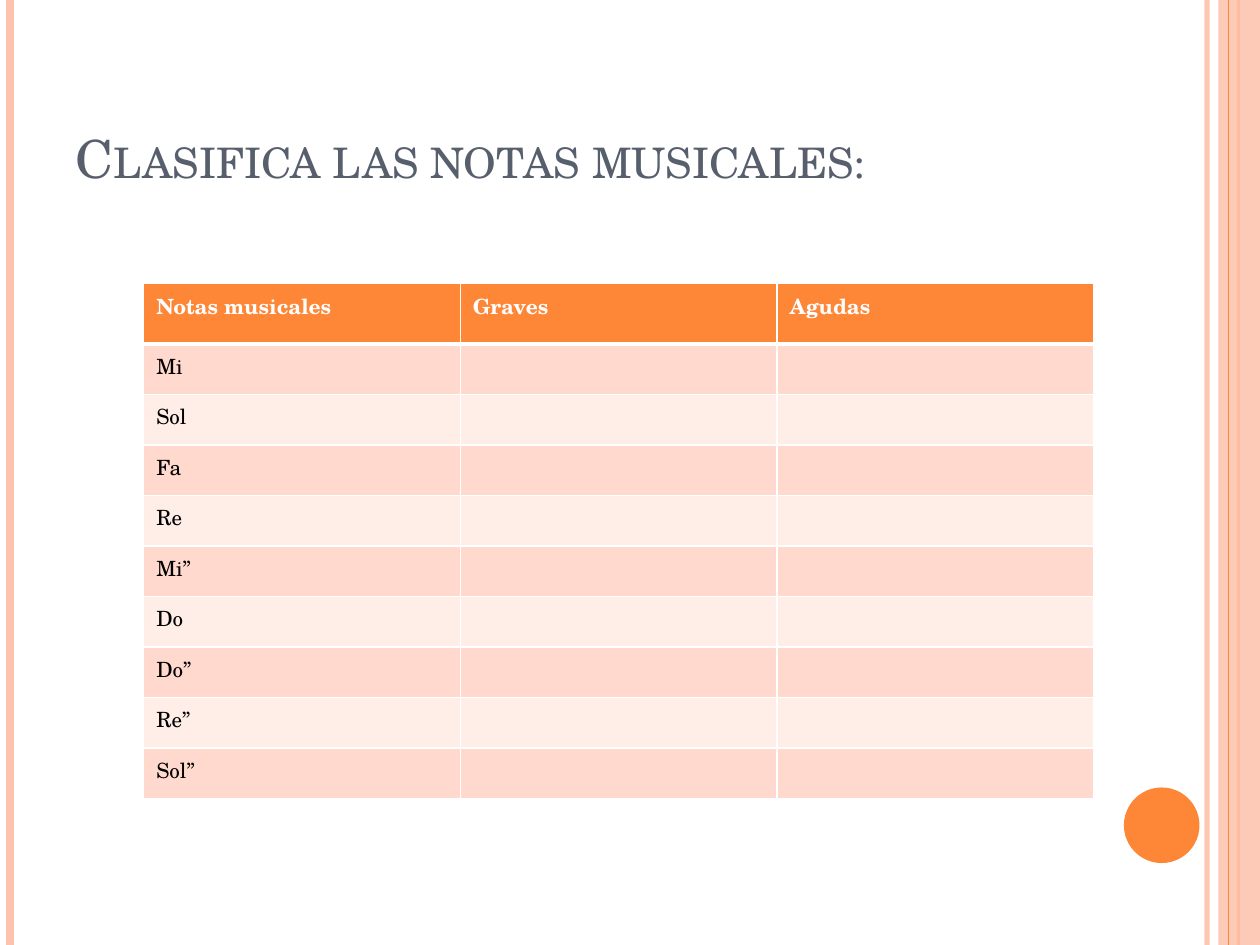
from lxml.etree import SubElement
from pptx import Presentation
from pptx.dml.color import RGBColor
from pptx.enum.shapes import MSO_CONNECTOR, MSO_SHAPE
from pptx.enum.text import MSO_ANCHOR
from pptx.oxml.ns import qn
from pptx.util import Inches, Pt

FONT = "TeX Gyre Schola"
ORANGE, PEACH, WHITE = "FE8637", "FEC3AE", "FFFFFF"
BANDS = ["FFD9CE", "FFEDE8"]
HEADERS = ["Notas musicales", "Graves", "Agudas"]
NOTES = ["Mi", "Sol", "Fa", "Re", "Mi”", "Do", "Do”", "Re”", "Sol”"]


def color(hex_text):
    return RGBColor.from_string(hex_text)


def set_alpha(fill_element, percent):
    clr = fill_element.find(".//" + qn("a:srgbClr"))
    SubElement(clr, qn("a:alpha"), val=str(percent * 1000))


def add_run(p, text, size, hex_text, bold=False):
    r = p.add_run()
    r.text = text
    r.font.name = FONT
    r.font.size = Pt(size)
    r.font.bold = bold
    r.font.color.rgb = color(hex_text)
    return r


def add_stripe(s, x, top, height, hex_text, width, alpha=None):
    line = s.shapes.add_connector(MSO_CONNECTOR.STRAIGHT, Inches(x), Inches(top),
                                  Inches(x), Inches(top + height))
    line.line.color.rgb = color(hex_text)
    line.line.width = Pt(width)
    if alpha:
        set_alpha(line.line._ln, alpha)
    SubElement(line._element.spPr, qn("a:effectLst"))


def add_solid(s, kind, left, top, width, height, hex_text):
    sp = s.shapes.add_shape(kind, Inches(left), Inches(top), Inches(width), Inches(height))
    sp.shadow.inherit = False
    sp.fill.solid()
    sp.fill.fore_color.rgb = color(hex_text)
    sp.line.fill.background()
    return sp


def add_frame(s, left, top, width, height):
    """Vertical stripes along both edges, with a disc near the right one."""
    right = left + width
    add_stripe(s, right - 0.42, top, height, PEACH, 3, 93)
    add_stripe(s, left + 0.08, top, height, PEACH, 4.5)
    add_stripe(s, right - 0.17, top, height, ORANGE, 1.5)
    band = add_solid(s, MSO_SHAPE.RECTANGLE, right - 0.33, top, 0.33, height, PEACH)
    set_alpha(band._element.spPr, 87)
    add_stripe(s, right - 0.25, top, height, ORANGE, 0.75)
    add_solid(s, MSO_SHAPE.OVAL, right - 1.08, top + height - 1.25, 0.6, 0.6, ORANGE)


def add_title(s, left, top, width, height, text):
    box = s.shapes.add_textbox(Inches(left), Inches(top), Inches(width), Inches(height))
    tf = box.text_frame
    tf.word_wrap = True
    tf.vertical_anchor = MSO_ANCHOR.BOTTOM
    r = add_run(tf.paragraphs[0], text, 30, "575F6D")
    r.font._element.set("cap", "small")


def set_borders(cell, bottom):
    tc_pr = cell._tc.get_or_add_tcPr()
    for side, width in (("L", 1), ("R", 1), ("T", 1), ("B", bottom)):
        ln = SubElement(tc_pr, qn("a:ln" + side), w=str(Pt(width)))
        SubElement(SubElement(ln, qn("a:solidFill")), qn("a:srgbClr"), val=WHITE)


def fill_cell(cell, text, fill, hex_text, bold=False, bottom=1):
    set_borders(cell, bottom)
    cell.fill.solid()
    cell.fill.fore_color.rgb = color(fill)
    p = cell.text_frame.paragraphs[0]
    if text:
        add_run(p, text, 12, hex_text, bold)
    else:
        # Keeps empty cells from growing the row
        SubElement(p._p, qn("a:endParaRPr"), sz="1200")


def add_notes_table(s, left, top, width, height, header_height):
    table = s.shapes.add_table(len(NOTES) + 1, len(HEADERS), Inches(left), Inches(top),
                               Inches(width), Inches(height)).table
    for col in table.columns:
        col.width = Inches(width / len(HEADERS))
    for row in table.rows:
        row.height = Inches((height - header_height) / len(NOTES))
    table.rows[0].height = Inches(header_height)

    # Header row
    for c, text in enumerate(HEADERS):
        fill_cell(table.cell(0, c), text, ORANGE, WHITE, bold=True, bottom=3)
    # One banded row for each note, with blank columns to fill in
    for i, note in enumerate(NOTES):
        for c in range(len(HEADERS)):
            fill_cell(table.cell(i + 1, c), "" if c else note, BANDS[i % 2], "000000")
    # The first note row shares the thick rule under the header
    for c in range(len(HEADERS)):
        table.cell(1, c)._tc.tcPr.find(qn("a:lnT")).set("w", str(Pt(3)))


def main():
    prs = Presentation()
    prs.slide_width, prs.slide_height = Inches(10), Inches(7.5)
    s = prs.slides.add_slide(prs.slide_layouts[6])
    add_frame(s, 0, 0, 10, 7.5)
    add_title(s, 0.5, 0.3, 8.17, 1.25, "Clasifica las notas musicales:")
    add_notes_table(s, 1.14, 2.25, 7.54, 4.09, 0.48)
    prs.save("out.pptx")


if __name__ == "__main__":
    main()
